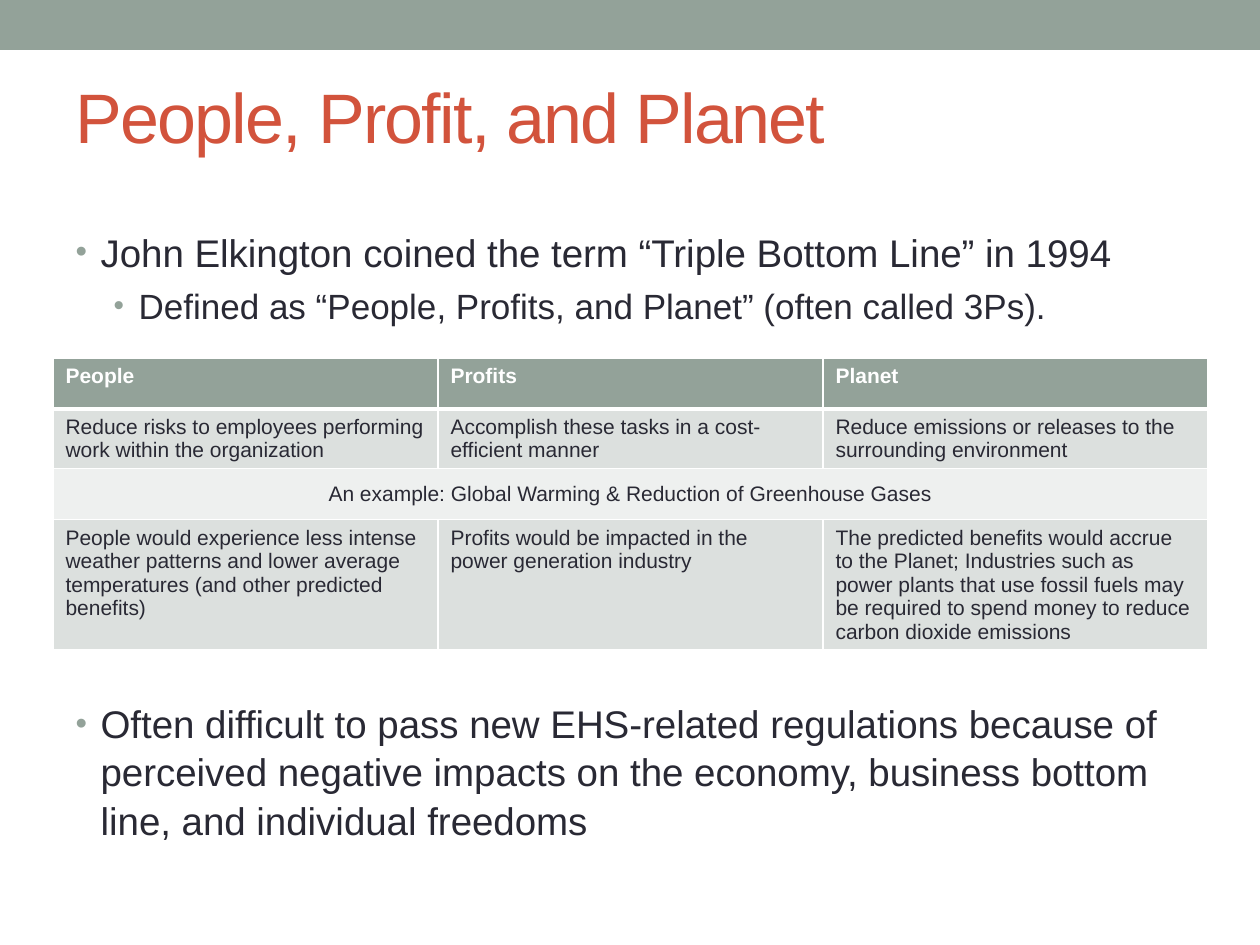
import pptx
import pptx.dml.color
import pptx.enum.shapes
import pptx.enum.text
import pptx.oxml
import pptx.oxml.ns
import pptx.util

SCALE = 914400 / 126
FONT = "Arial"
COLOURS = {
    "sage": "93A299",
    "rust": "D2533C",
    "ink": "292934",
    "white": "FFFFFF",
    "band": "DCE0DE",
    "pale": "EEF0EF",
}
BULLETS = [
    ("John Elkington coined the term “Triple Bottom Line” in 1994", 0, 22, 0),
    ("Defined as “People, Profits, and Planet” (often called 3Ps).", 1, 20, 4.4),
    ("Often difficult to pass new EHS-related regulations because of perceived "
     "negative impacts on the economy, business bottom line, and individual freedoms",
     0, 22, 212),
]
ROWS = [
    ["People", "Profits", "Planet"],
    ["Reduce risks to employees performing work within the organization",
     "Accomplish these tasks in a cost-efficient manner",
     "Reduce emissions or releases to the surrounding environment"],
    ["An example: Global Warming & Reduction of Greenhouse Gases"],
    ["People would experience less intense weather patterns and lower average "
     "temperatures (and other predicted benefits)",
     "Profits would be impacted in the power generation industry",
     "The predicted benefits would accrue to the Planet; Industries such as power "
     "plants that use fossil fuels may be required to spend money to reduce carbon "
     "dioxide emissions"],
]
ROW_FILLS = ["sage", "band", "pale", "band"]
ROW_HEIGHTS = [51, 59, 51, 130]
COLUMN_WIDTH = 385


def px(length):
    """Turn whole px into EMU."""
    return pptx.util.Emu(round(length * SCALE))


def colour(name):
    """Return a named colour."""
    return pptx.dml.color.RGBColor.from_string(COLOURS[name])


def add_xml(parent, markup, index=None):
    """Add DrawingML markup to a parent element."""
    tag, rest = markup.split(" ", 1)
    element = pptx.oxml.parse_xml(
        f"<{tag} {pptx.oxml.ns.nsdecls('a')} {rest}"
    )
    parent.insert(len(parent) if index is None else index, element)


def write(para, text, size, ink="ink", bold=False, spacing=None, align="LEFT"):
    """Write one formatted span into a paragraph."""
    para.alignment = getattr(pptx.enum.text.PP_ALIGN, align)
    span = para.add_run()
    span.text = text
    span.font.name = FONT
    span.font.size = pptx.util.Pt(size)
    span.font.bold = bold
    span.font.color.rgb = colour(ink)
    if spacing is not None:
        span.font._element.set("spc", str(spacing))


def place(box, left, top, width, height):
    """Move and size a box."""
    box.left, box.top, box.width, box.height = map(px, (left, top, width, height))


def add_band(page):
    """Draw the band along the top edge."""
    band = page.shapes.add_shape(
        pptx.enum.shapes.MSO_SHAPE.RECTANGLE, 0, 0, px(1260), px(50)
    )
    band.shadow.inherit = False
    band.fill.solid()
    band.fill.fore_color.rgb = colour("sage")
    band.line.fill.background()


def fill_title(box):
    """Place and write the title."""
    place(box, 63, 73, 1134, 84)
    frame = box.text_frame
    frame.word_wrap = True
    frame.auto_size = pptx.enum.text.MSO_AUTO_SIZE.NONE
    frame.vertical_anchor = pptx.enum.text.MSO_ANCHOR.MIDDLE
    write(frame.paragraphs[0], "People, Profit, and Planet", 40, ink="rust", spacing=-100)


def fill_body(box):
    """Place and write the bulleted list around the table."""
    place(box, 63, 220, 1134, 725)
    frame = box.text_frame
    frame.word_wrap = True
    frame.auto_size = pptx.enum.text.MSO_AUTO_SIZE.NONE
    for number, (text, level, size, before) in enumerate(BULLETS):
        para = frame.add_paragraph() if number else frame.paragraphs[0]
        write(para, text, size)
        para.level = level
        para.line_spacing = 1.05
        para.space_before = pptx.util.Pt(before)
        props = para._p.get_or_add_pPr()
        props.set("marL", str(px(25 + 38 * level)))
        props.set("indent", str(px(-25)))
        add_xml(props, f'a:buClr ><a:srgbClr val="{COLOURS["sage"]}"/></a:buClr>')
        add_xml(props, 'a:buSzPct val="85000"/>')
        add_xml(props, f'a:buFont typeface="{FONT}"/>')
        add_xml(props, 'a:buChar char="•"/>')


def set_borders(cell, bottom):
    """Give a cell white borders with its own bottom width."""
    props = cell._tc.get_or_add_tcPr()
    for index, side in enumerate("LRTB"):
        width = pptx.util.Pt(bottom if side == "B" else 1)
        add_xml(
            props,
            f'a:ln{side} w="{width}"><a:solidFill><a:srgbClr val="{COLOURS["white"]}"/>'
            f"</a:solidFill></a:ln{side}>",
            index,
        )


def add_grid(page):
    """Build the table of the three Ps."""
    columns = len(ROWS[0])
    table = page.shapes.add_table(
        len(ROWS), columns, px(53), px(358),
        px(columns * COLUMN_WIDTH), px(sum(ROW_HEIGHTS)),
    ).table
    for column in table.columns:
        column.width = px(COLUMN_WIDTH)
    for number, texts in enumerate(ROWS):
        header = number == 0
        table.rows[number].height = px(ROW_HEIGHTS[number])
        for index in range(columns):
            cell = table.cell(number, index)
            cell.fill.solid()
            cell.fill.fore_color.rgb = colour(ROW_FILLS[number])
            set_borders(cell, 3 if header else 1)
        for index, text in enumerate(texts):
            write(
                table.cell(number, index).text_frame.paragraphs[0], text, 12,
                ink="white" if header else "ink", bold=header,
                align="LEFT" if len(texts) == columns else "CENTER",
            )
        if len(texts) == 1:
            merged = table.cell(number, 0)
            merged.merge(table.cell(number, columns - 1))
            merged.vertical_anchor = pptx.enum.text.MSO_ANCHOR.MIDDLE


def main():
    """Build and save the deck."""
    deck = pptx.Presentation()
    deck.slide_width, deck.slide_height = px(1260), px(945)
    page = deck.slides.add_slide(deck.slide_layouts[1])
    add_band(page)
    fill_title(page.shapes.title)
    fill_body(page.placeholders[1])
    add_grid(page)
    deck.save("out.pptx")


if __name__ == "__main__":
    main()
